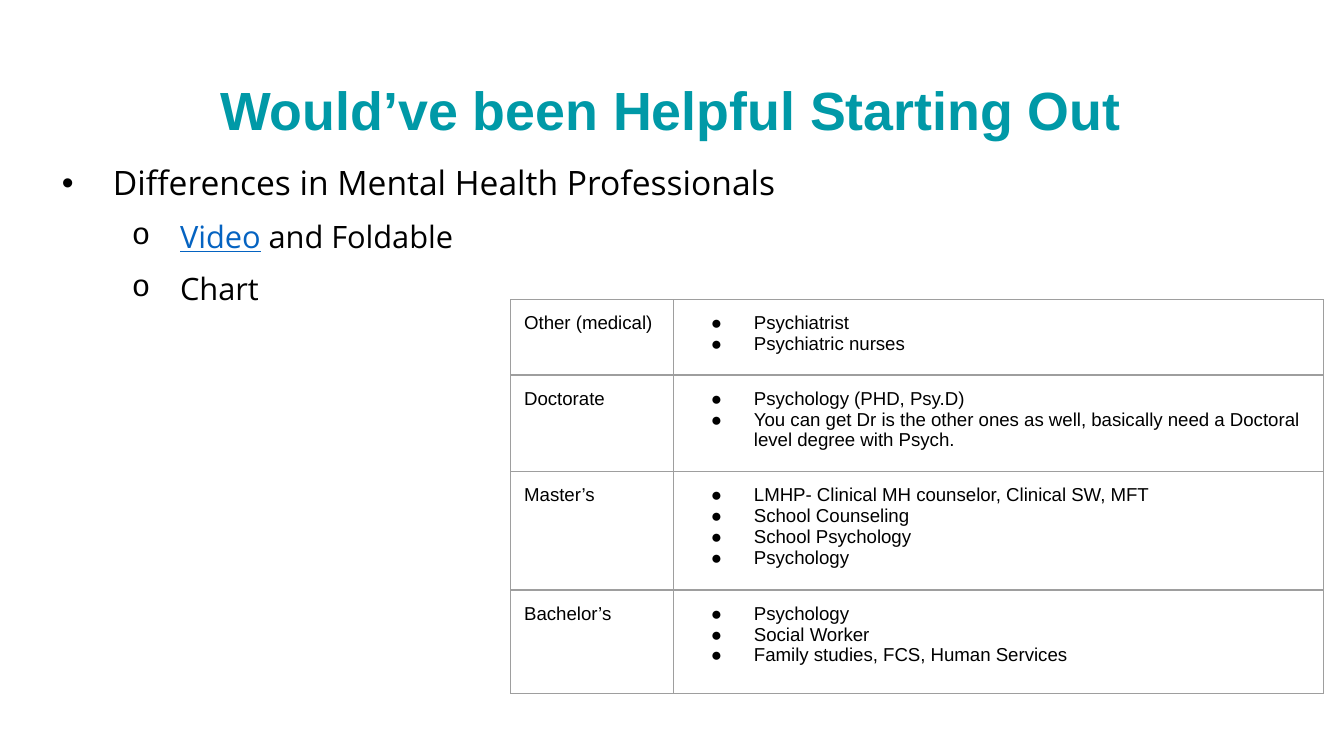
from lxml import etree
from pptx import Presentation
from pptx.dml.color import RGBColor
from pptx.enum.text import MSO_ANCHOR, MSO_AUTO_SIZE, PP_ALIGN
from pptx.oxml.ns import qn
from pptx.util import Inches, Pt

MIDDLE, TOP = MSO_ANCHOR.MIDDLE, MSO_ANCHOR.TOP
NO_FIT = MSO_AUTO_SIZE.NONE
CENTER, LEFT = PP_ALIGN.CENTER, PP_ALIGN.LEFT

COLORS = {"title": "0099A7", "text": "000000", "link": "0563C1", "border": "9E9E9E"}
TITLE = "Would’ve been Helpful Starting Out"
OUTLINE = [
    {"level": 0, "spans": ["Differences in Mental Health Professionals"], "before": 0, "after": 0},
    {"level": 1, "spans": ["Video", " and Foldable"], "before": 10, "after": 0},
    {"level": 1, "spans": ["Chart"], "before": 10, "after": 10},
]
LEVELS = [
    {"size": 18, "bullet": "•", "bullet_font": "Arial", "margin": 0.5, "indent": -0.38},
    {"size": 16.5, "bullet": "o", "bullet_font": "Courier New", "margin": 1, "indent": -0.36},
]
DEGREES = [
    ("Other (medical)", ["Psychiatrist", "Psychiatric nurses"]),
    ("Doctorate", [
        "Psychology (PHD, Psy.D)",
        "You can get Dr is the other ones as well, basically need a Doctoral level degree with Psych.",
    ]),
    ("Master’s", [
        "LMHP- Clinical MH counselor, Clinical SW, MFT",
        "School Counseling",
        "School Psychology",
        "Psychology",
    ]),
    ("Bachelor’s", ["Psychology", "Social Worker", "Family studies, FCS, Human Services"]),
]
COLUMN_WIDTHS = [1.21, 4.84]
ROW_HEIGHTS = [0.56, 0.72, 0.88, 0.77]


def style(font, name, size, color, bold=False):
    font.name, font.size, font.bold = name, Pt(size), bold
    font.color.rgb = RGBColor.from_string(COLORS[color])


def add_bullet(para, char, font_name, margin, indent):
    props = para._p.get_or_add_pPr()
    props.set("marL", str(Inches(margin)))
    props.set("indent", str(Inches(indent)))
    color = etree.SubElement(props, qn("a:buClr"))
    etree.SubElement(color, qn("a:srgbClr"), val=COLORS["text"])
    etree.SubElement(props, qn("a:buFont"), typeface=font_name)
    etree.SubElement(props, qn("a:buChar"), char=char)


def place(shape, left, top, width, height, anchor):
    shape.left, shape.top = Inches(left), Inches(top)
    shape.width, shape.height = Inches(width), Inches(height)
    frame = shape.text_frame
    frame.word_wrap, frame.auto_size, frame.vertical_anchor = True, NO_FIT, anchor
    return frame


def add_borders(cell):
    props = cell._tc.get_or_add_tcPr()
    for side in ("lnL", "lnR", "lnT", "lnB"):
        line = etree.SubElement(props, qn(f"a:{side}"), w=str(Pt(0.75)))
        fill = etree.SubElement(line, qn("a:solidFill"))
        etree.SubElement(fill, qn("a:srgbClr"), val=COLORS["border"])


def fill_cell(cell, lines, bulleted):
    add_borders(cell)
    cell.fill.background()
    cell.margin_left = cell.margin_right = Inches(0.1)
    cell.margin_top = cell.margin_bottom = Inches(0.1)
    cell.vertical_anchor = TOP
    cell.text_frame.text = "\n".join(lines)
    for para in cell.text_frame.paragraphs:
        if bulleted:
            add_bullet(para, "●", "Arial", 0.5, -0.32)
        for span in para.runs:
            style(span.font, "Arial", 10, "text")


deck = Presentation()
deck.slide_width = Inches(10)
deck.slide_height = deck.slide_width * 9 // 16
page = deck.slides.add_slide(deck.slide_layouts[1])

title = place(page.shapes.title, 0.24, 0.56, 9.5, 0.56, MIDDLE)
title.text = TITLE
heading = title.paragraphs[0]
heading.alignment, heading.line_spacing = CENTER, 0.9
style(heading.runs[0].font, "Arial", 28.8, "title", True)

body = place(page.placeholders[1], 0.24, 1.19, 6.31, 1.34, TOP)
body.text = "\n".join("".join(item["spans"]) for item in OUTLINE)
for para, item in zip(body.paragraphs, OUTLINE):
    level = LEVELS[item["level"]]
    para.level = item["level"]
    add_bullet(para, level["bullet"], level["bullet_font"], level["margin"], level["indent"])
    para.alignment, para.line_spacing = LEFT, 0.9
    para.space_before, para.space_after = Pt(item["before"]), Pt(item["after"])
    para.runs[0].text = item["spans"][0]
    for text in item["spans"][1:]:
        para.add_run().text = text
    for span in para.runs:
        is_link = span.text == "Video"
        style(span.font, "Open Sans", level["size"], "link" if is_link else "text")
        span.font.underline = is_link

table = page.shapes.add_table(
    len(DEGREES), len(COLUMN_WIDTHS), Inches(3.8), Inches(2.23),
    Inches(sum(COLUMN_WIDTHS)), Inches(sum(ROW_HEIGHTS)),
).table
table.first_row = table.horz_banding = False
for column, width in zip(table.columns, COLUMN_WIDTHS):
    column.width = Inches(width)
for index, (degree, professions) in enumerate(DEGREES):
    table.rows[index].height = Inches(ROW_HEIGHTS[index])
    fill_cell(table.cell(index, 0), [degree], False)
    fill_cell(table.cell(index, 1), professions, True)

deck.save("out.pptx")
